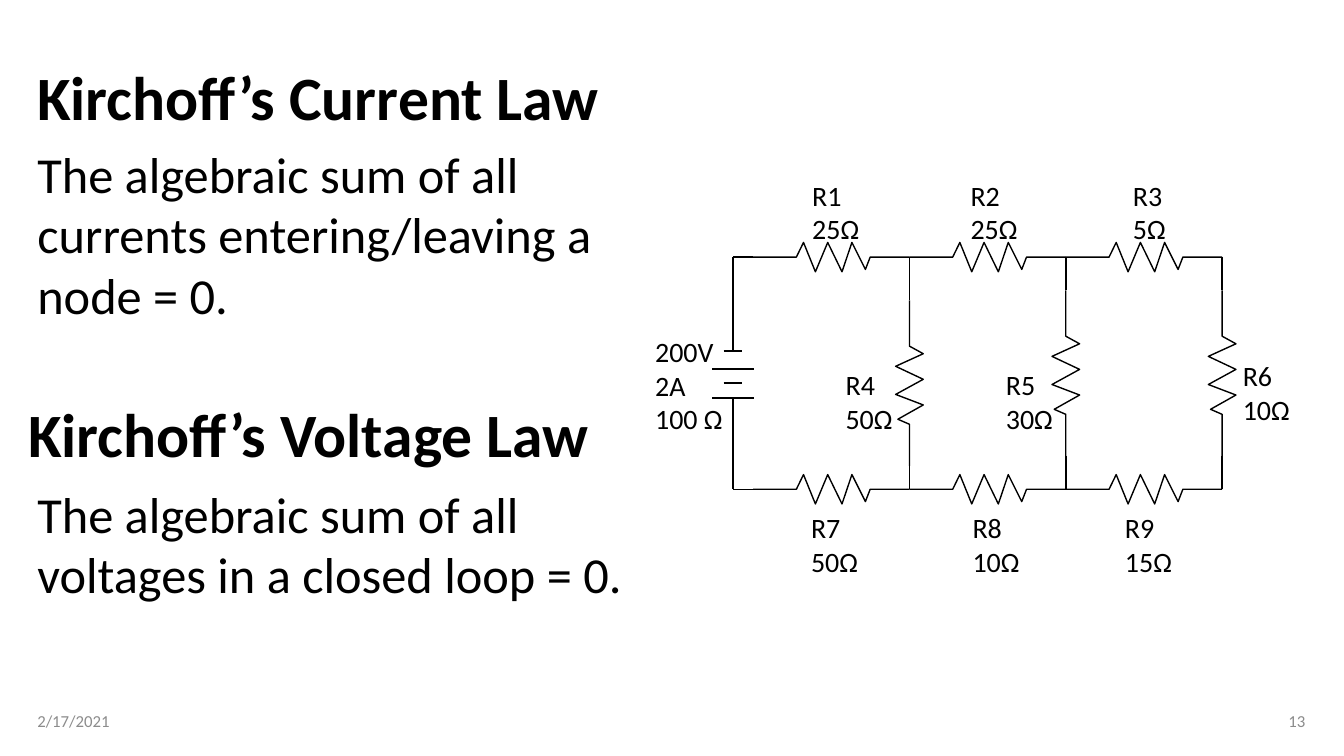
from lxml import etree
from pptx import Presentation
from pptx.dml.color import RGBColor
from pptx.enum.shapes import MSO_CONNECTOR
from pptx.enum.text import MSO_ANCHOR, PP_ALIGN
from pptx.oxml.ns import qn
from pptx.util import Cm, Pt

BLACK = RGBColor(0x00, 0x00, 0x00)
GREY = RGBColor(0x8C, 0x8C, 0x8C)
TOP, MIDDLE = MSO_ANCHOR.TOP, MSO_ANCHOR.MIDDLE
LEFT, RIGHT = PP_ALIGN.LEFT, PP_ALIGN.RIGHT
STRAIGHT = MSO_CONNECTOR.STRAIGHT

prs = Presentation()
prs.slide_width, prs.slide_height = Cm(33.87), Cm(19.05)
s = prs.slides.add_slide(prs.slide_layouts[6])


def add_text(text, x, y, w, h, size=20, color=BLACK, bold=False,
             anchor=TOP, align=LEFT, spacing=1.0, wrap=True):
    tf = s.shapes.add_textbox(Cm(x), Cm(y), Cm(w), Cm(h)).text_frame
    tf.word_wrap = wrap
    tf.vertical_anchor = anchor
    for i, line in enumerate(text.split("\n")):
        p = tf.paragraphs[0] if i == 0 else tf.add_paragraph()
        p.alignment = align
        p.line_spacing = spacing
        r = p.add_run()
        r.text = line
        r.font.name = "Calibri"
        r.font.size = Pt(size)
        r.font.bold = bold
        r.font.color.rgb = color


laws = [
    ("Kirchoff’s Current Law", 0.69, 1.52,
     "The algebraic sum of all currents entering/leaving a node = 0.", 3.48, 4.88),
    ("Kirchoff’s Voltage Law", 0.46, 10.01,
     "The algebraic sum of all voltages in a closed loop = 0.", 12.04, 3.33),
]
for title, title_x, title_y, law, law_y, law_h in laws:
    add_text(title, title_x, title_y, 15.06, 2.03, size=44, bold=True,
             anchor=MIDDLE, spacing=0.9)
    add_text(law, 0.69, law_y, 15.37, law_h, size=36)

add_text("2/17/2021", 0.69, 17.65, 9.27, 1.02, size=12, color=GREY, anchor=MIDDLE)
add_text("13", 23.93, 17.65, 9.22, 1.02, size=12, color=GREY, anchor=MIDDLE, align=RIGHT)

PITCH = 3.94
RAIL_TOP, RAIL_BOTTOM = 6.48, 12.33
BATTERY_X = 18.47
node_x = [18.98 + PITCH * i for i in range(4)]
ZIGZAG = [(0, 0), (1.09, 0), (1.27, -0.37), (1.57, 0.37), (1.88, -0.37), (2.24, 0.37),
          (2.49, -0.37), (2.83, 0.31), (2.95, 0), (PITCH, 0)]
UPRIGHT_LENGTH = 4.17
STRETCH = UPRIGHT_LENGTH / PITCH
SQUEEZE = 0.94

resistors = [[(x + along, y + across) for along, across in ZIGZAG]
             for y in (RAIL_TOP, RAIL_BOTTOM) for x in node_x[:3]]
wires = []
for x, start in zip(node_x[1:], (7.57, 7.32, 7.32)):
    resistors.append([(x - across * SQUEEZE, start + along * STRETCH)
                      for along, across in ZIGZAG])
    wires += [(x, RAIL_TOP, x, start), (x, start + UPRIGHT_LENGTH, x, RAIL_BOTTOM)]

for points in resistors:
    corners = [(Cm(x), Cm(y)) for x, y in points]
    builder = s.shapes.build_freeform(*corners[0])
    builder.add_line_segments(corners[1:], close=False)
    sp = builder.convert_to_shape()
    sp.shadow.inherit = False
    sp.fill.background()
    sp.line.color.rgb = BLACK
    sp.line.width = Pt(1)

for y, half in ((8.84, 0.23), (9.3, 0.52), (9.65, 0.23), (10.03, 0.52)):
    wires.append((BATTERY_X - half, y, BATTERY_X + half, y))
wires += [(BATTERY_X, RAIL_TOP, BATTERY_X, 8.84), (BATTERY_X, 10.03, BATTERY_X, RAIL_BOTTOM)]
wires += [(BATTERY_X, y, node_x[0], y) for y in (RAIL_TOP, RAIL_BOTTOM)]
for x1, y1, x2, y2 in wires:
    wire = s.shapes.add_connector(STRAIGHT, Cm(x1), Cm(y1), Cm(x2), Cm(y2))
    wire.line.color.rgb = BLACK
    wire.line.width = Pt(1)
    etree.SubElement(wire._element.spPr, qn("a:effectLst"))

labels = [
    ("R1\n25Ω", 20.22, 4.37), ("R2\n25Ω", 24.21, 4.37), ("R3\n5Ω", 28.3, 4.37),
    ("R4\n50Ω", 21.06, 9.14), ("R5\n30Ω", 25.1, 9.14), ("R6\n10Ω", 31.07, 8.92),
    ("R7\n50Ω", 20.19, 12.75), ("R8\n10Ω", 24.26, 12.75), ("R9\n15Ω", 28.1, 12.75),
]
for label, x, y in labels:
    add_text(label, x, y, 1.36 if label == "R3\n5Ω" else 1.7, 1.96, wrap=False)
add_text("200V\n2A\n100 Ω", 16.26, 8.31, 2.24, 2.82, wrap=False)

prs.save("out.pptx")
